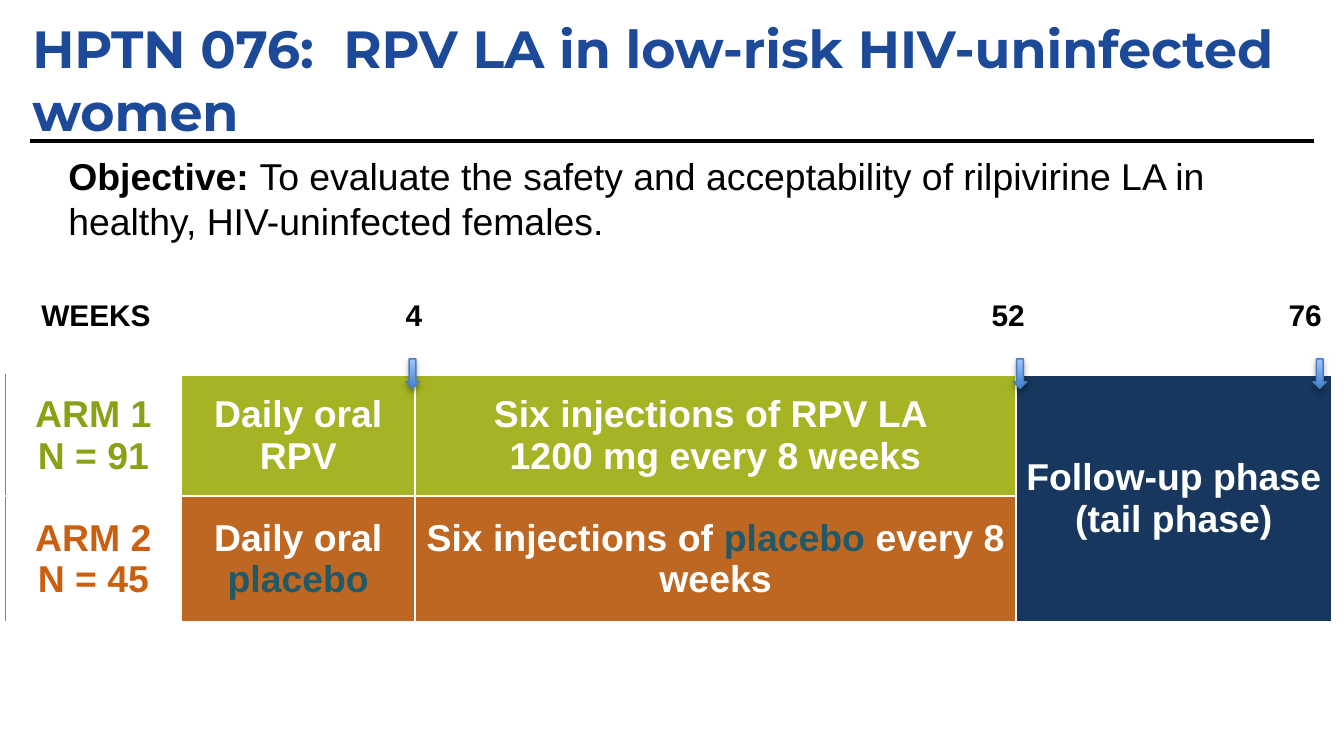
from lxml import etree
from pptx import Presentation
from pptx.dml.color import RGBColor
from pptx.enum.shapes import MSO_CONNECTOR, MSO_SHAPE
from pptx.enum.text import MSO_ANCHOR, MSO_AUTO_SIZE, PP_ALIGN
from pptx.oxml import parse_xml
from pptx.oxml.ns import nsdecls, qn
from pptx.util import Inches, Pt

COLORS = {
    "title": "1D4999", "black": "000000", "white": "FFFFFF", "gray": "7F7F7F",
    "arm1": "89A215", "arm2": "CA5F0F", "green": "A5B324", "orange": "BE6722",
    "navy": "17375E", "teal": "215968",
    "arrow_dark": "3F80CE", "arrow_light": "A4C4FF", "arrow_line": "4B7EBC",
}


def rgb(name):
    return RGBColor.from_string(COLORS[name])


def write(para, text, size=20, color="black", bold=True, font="Arial"):
    span = para.add_run()
    span.text = text
    span.font.size = Pt(size)
    span.font.bold = bold
    span.font.name = font
    span.font.color.rgb = rgb(color)


# A 16:9 page
deck = Presentation()
deck.slide_width, deck.slide_height = Inches(10), Inches(10 * 9 / 16)
page = deck.slides.add_slide(deck.slide_layouts[5])

# Title
title = page.shapes.title
title.left, title.top = Inches(0.14), Inches(0.07)
title.width, title.height = Inches(9.73), Inches(1.04)
title.text_frame.auto_size = MSO_AUTO_SIZE.NONE
title.text_frame.vertical_anchor = MSO_ANCHOR.TOP
para = title.text_frame.paragraphs[0]
para.alignment = PP_ALIGN.LEFT
write(para, "HPTN 076:  RPV LA in low-risk HIV-uninfected women",
      size=28, color="title", font="Montserrat")

# Study arms: each cell is (fill, lines), each line a list of (text, color)
arms = [
    [(None, [[("ARM 1", "arm1")], [("N = 91", "arm1")]]),
     ("green", [[("Daily oral RPV", "white")]]),
     ("green", [[("Six injections of RPV LA ", "white")],
                [("1200 mg every 8 weeks", "white")]]),
     ("navy", [[("Follow-up phase", "white")], [("(tail phase)", "white")]])],
    [(None, [[("ARM 2", "arm2")], [("N = 45", "arm2")]]),
     ("orange", [[("Daily oral", "white")], [("placebo", "teal")]]),
     ("orange", [[("Six injections of ", "white"), ("placebo", "teal"),
                  (" every 8 weeks", "white")]])],
]
widths = [1.31, 1.74, 4.47, 2.35]
heights = [0.24, 0.9, 0.94]
table = page.shapes.add_table(3, 4, Inches(0.04), Inches(2.55),
                              Inches(sum(widths)), Inches(sum(heights))).table
table.horz_banding = False
for column, width in zip(table.columns, widths):
    column.width = Inches(width)
for row, height in zip(table.rows, heights):
    row.height = Inches(height)
table.cell(1, 3).merge(table.cell(2, 3))

# Cell borders and margins
for r in range(3):
    for c in range(4):
        cell = table.cell(r, c)
        cell.margin_left = cell.margin_right = Inches(0.07)
        cell.margin_top = cell.margin_bottom = Inches(0.04)
        cell.vertical_anchor = MSO_ANCHOR.MIDDLE
        properties = cell._tc.get_or_add_tcPr()
        for side in "LRTB":
            color = "gray" if side == "L" and c == 0 and r > 0 else "white"
            properties.append(parse_xml(
                f'<a:ln{side} {nsdecls("a")} w="12700"><a:solidFill>'
                f'<a:srgbClr val="{COLORS[color]}"/></a:solidFill></a:ln{side}>'))
        cell.fill.background()
        if r == 0:
            # Small type keeps the empty header row thin
            end = etree.SubElement(cell.text_frame.paragraphs[0]._p, qn("a:endParaRPr"))
            end.set("sz", "800")

# Cell fills and text
for r, arm in enumerate(arms, start=1):
    for c, (fill, lines) in enumerate(arm):
        cell = table.cell(r, c)
        if fill:
            cell.fill.solid()
            cell.fill.fore_color.rgb = rgb(fill)
        for i, line in enumerate(lines):
            frame = cell.text_frame
            para = frame.add_paragraph() if i else frame.paragraphs[0]
            para.alignment = PP_ALIGN.CENTER
            for text, color in line:
                write(para, text, color=color)

# Week arrows
for left in (3.02, 9.77, 7.54):
    arrow = page.shapes.add_shape(MSO_SHAPE.DOWN_ARROW, Inches(left), Inches(2.67),
                                  Inches(0.1), Inches(0.22))
    arrow.fill.gradient()
    arrow.fill.gradient_angle = 90
    for stop, color in zip(arrow.fill.gradient_stops, ("arrow_dark", "arrow_light")):
        stop.color.rgb = rgb(color)
    arrow.line.color.rgb = rgb("arrow_line")
    arrow.line.width = Pt(0.75)
    arrow.shadow.inherit = False
    arrow._element.spPr.find(qn("a:effectLst")).append(parse_xml(
        f'<a:outerShdw {nsdecls("a")} blurRad="{Pt(3.1)}" dist="{Pt(1.8)}" '
        f'dir="5400000" rotWithShape="0"><a:srgbClr val="{COLORS["black"]}">'
        '<a:alpha val="35000"/></a:srgbClr></a:outerShdw>'))

# Week labels on tab stops
box = page.shapes.add_textbox(Inches(0.21), Inches(2.16), Inches(10.96), Inches(0.37))
box.text_frame.word_wrap = True
para = box.text_frame.paragraphs[0]
tabs = etree.SubElement(para._p.get_or_add_pPr(), qn("a:tabLst"))
for position in (2.71, 7.07, 9.28):
    etree.SubElement(tabs, qn("a:tab"), pos=str(Inches(position)), algn="l")
write(para, "WEEKS\t4\t52\t76", size=16)

# Rule under the title
rule = page.shapes.add_connector(MSO_CONNECTOR.STRAIGHT, Inches(0.22), Inches(1.05),
                                 Inches(9.78), Inches(1.05))
rule.line.color.rgb = rgb("black")
rule.line.width = Pt(2.25)
etree.SubElement(rule._element.spPr, qn("a:effectLst"))

# Objective
box = page.shapes.add_textbox(Inches(0.41), Inches(1.09), Inches(9.18), Inches(0.77))
box.text_frame.word_wrap = True
para = box.text_frame.paragraphs[0]
write(para, "Objective: ")
write(para, "To evaluate the safety and acceptability of rilpivirine LA in "
            "healthy, HIV-uninfected females.", bold=False)

deck.save("out.pptx")
